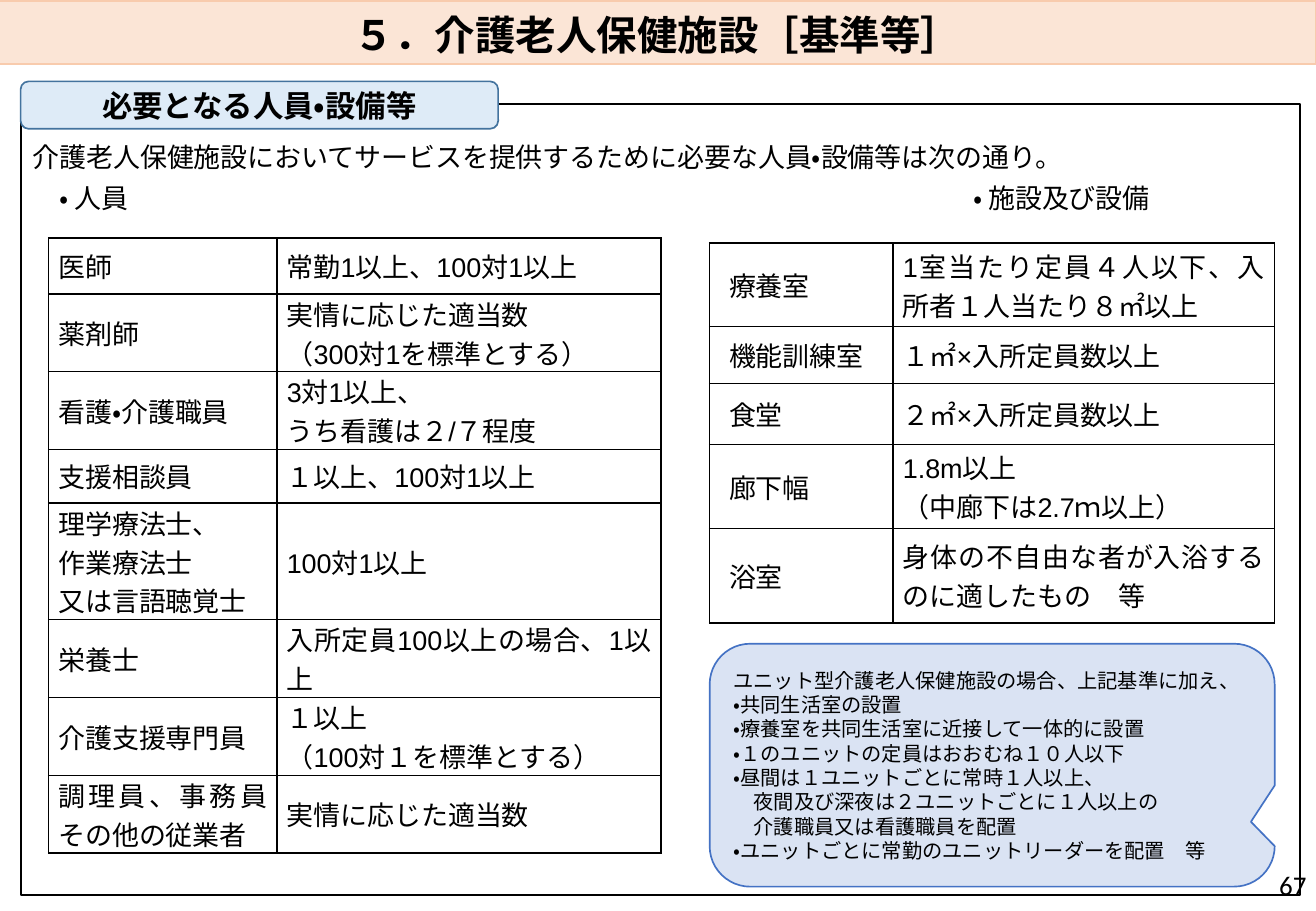
from dataclasses import dataclass

from lxml import etree
from pptx import Presentation
from pptx.dml.color import RGBColor
from pptx.enum.lang import MSO_LANGUAGE_ID
from pptx.enum.shapes import MSO_SHAPE
from pptx.enum.text import MSO_ANCHOR, PP_ALIGN
from pptx.oxml.ns import qn
from pptx.util import Inches, Pt

LEFT, CENTER, RIGHT, JUSTIFY = PP_ALIGN.LEFT, PP_ALIGN.CENTER, PP_ALIGN.RIGHT, PP_ALIGN.JUSTIFY
TOP, MIDDLE, BOTTOM = MSO_ANCHOR.TOP, MSO_ANCHOR.MIDDLE, MSO_ANCHOR.BOTTOM
RECTANGLE, ROUNDED = MSO_SHAPE.RECTANGLE, MSO_SHAPE.ROUNDED_RECTANGLE
CALLOUT = MSO_SHAPE.ROUNDED_RECTANGULAR_CALLOUT
JAPANESE = MSO_LANGUAGE_ID.JAPANESE

COLORS = {
    "ink": "000000",
    "label": "DEEBF7", "label_line": "43739E",
    "note": "DAE3F3", "note_line": "4472C4",
    "banner": "FBE5D6", "banner_line": "F8CBAD",
}
BODY, HEADING, NUMBER = "Arial", "Noto Sans CJK JP", "Calibri"


@dataclass(frozen=True)
class Style:
    size: float
    font: str = BODY
    bold: bool = False
    align: PP_ALIGN = LEFT


@dataclass(frozen=True)
class Panel:
    kind: MSO_SHAPE
    at: tuple[float, float, float, float]
    line: str
    text: str
    style: Style
    fill: str | None = None
    line_width: float = 1
    anchor: MSO_ANCHOR = MIDDLE
    adjustments: tuple[float, ...] = ()


@dataclass(frozen=True)
class Grid:
    left: float
    top: float
    columns: tuple[float, float]
    heights: tuple[float, ...]
    name_inset: float
    rows: tuple[tuple[str, str], ...]


FRAME = Panel(
    RECTANGLE, (0.17, 0.86, 10.53, 6.51), "ink",
    "介護老人保健施設においてサービスを提供するために必要な人員・設備等は次の通り。\n"
    "　・ 人員\t・ 施設及び設備",
    Style(16), line_width=1.25, anchor=TOP)
LABEL = Panel(ROUNDED, (0.17, 0.67, 3.93, 0.39), "label_line", "必要となる人員・設備等",
              Style(18, HEADING, True, CENTER), "label")
NOTE = Panel(
    CALLOUT, (5.84, 5.3, 4.65, 2), "note_line",
    "ユニット型介護老人保健施設の場合、上記基準に加え、\n"
    "・共同生活室の設置\n"
    "・療養室を共同生活室に近接して一体的に設置\n"
    "・１のユニットの定員はおおむね１０人以下\n"
    "・昼間は１ユニットごとに常時１人以上、\n"
    "　夜間及び深夜は２ユニットごとに１人以上の\n"
    "　介護職員又は看護職員を配置\n"
    "・ユニットごとに常勤のユニットリーダーを配置　等",
    Style(12), "note", adjustments=(0.458, 0.233, 0.167))
BANNER = Panel(RECTANGLE, (-0.01, 0.01, 10.84, 0.52), "banner_line",
               "５．介護老人保健施設［基準等］",
               Style(24, HEADING, True, CENTER), "banner", anchor=BOTTOM)

STAFF = Grid(
    0.4, 1.96, (1.88, 3.16), (0.46, 0.52, 0.56, 0.44, 0.86, 0.48, 0.6, 0.52), 0.08,
    (("医師", "常勤1以上、100対1以上"),
     ("薬剤師", "実情に応じた適当数\n（300対1を標準とする）"),
     ("看護・介護職員", "3対1以上、\nうち看護は２/７程度"),
     ("支援相談員", "１以上、100対1以上"),
     ("理学療法士、\n作業療法士\n又は言語聴覚士", "100対1以上"),
     ("栄養士", "入所定員100以上の場合、1以上"),
     ("介護支援専門員", "１以上\n（100対１を標準とする）"),
     ("調理員、事務員その他の従業者", "実情に応じた適当数")))
ROOMS = Grid(
    5.84, 2, (1.51, 3.14), (0.69, 0.47, 0.5, 0.69, 0.78), 0.16,
    (("療養室", "1室当たり定員４人以下、入所者１人当たり８㎡以上"),
     ("機能訓練室", "１㎡×入所定員数以上"),
     ("食堂", "２㎡×入所定員数以上"),
     ("廊下幅", "1.8m以上\n（中廊下は2.7ｍ以上）"),
     ("浴室", "身体の不自由な者が入浴するのに適したもの　等")))


def color(name: str) -> RGBColor:
    return RGBColor.from_string(COLORS[name])


def write(frame, text: str, style: Style) -> None:
    frame.text = text
    for para in frame.paragraphs:
        para.alignment = style.align
        font = para.font
        font.name, font.size, font.bold = style.font, Pt(style.size), style.bold
        font.color.rgb = color("ink")
        font.language_id = JAPANESE


def add_panel(page, panel: Panel):
    box = page.shapes.add_shape(panel.kind, *map(Inches, panel.at))
    box.shadow.inherit = False
    for index, value in enumerate(panel.adjustments):
        box.adjustments[index] = value
    if panel.fill:
        box.fill.solid()
        box.fill.fore_color.rgb = color(panel.fill)
    else:
        box.fill.background()
    box.line.color.rgb = color(panel.line)
    box.line.width = Pt(panel.line_width)
    box.text_frame.vertical_anchor = panel.anchor
    write(box.text_frame, panel.text, panel.style)
    return box.text_frame


def add_borders(cell) -> None:
    """Put a thin line on all four sides; must run before the cell's fill is set."""
    properties = cell._tc.get_or_add_tcPr()
    for side in ("a:lnL", "a:lnR", "a:lnT", "a:lnB"):
        line = etree.SubElement(properties, qn(side), w=str(Pt(1)))
        fill = etree.SubElement(line, qn("a:solidFill"))
        etree.SubElement(fill, qn("a:srgbClr"), val=COLORS["ink"])


def add_grid(page, grid: Grid) -> None:
    table = page.shapes.add_table(
        len(grid.rows), len(grid.columns), Inches(grid.left), Inches(grid.top),
        Inches(sum(grid.columns)), Inches(sum(grid.heights))).table
    table.first_row = table.horz_banding = False
    for column, width in zip(table.columns, grid.columns):
        column.width = Inches(width)
    for row, height, texts in zip(table.rows, grid.heights, grid.rows):
        row.height = Inches(height)
        for cell, text, inset in zip(row.cells, texts, (grid.name_inset, 0.08)):
            cell.margin_left, cell.margin_right = Inches(inset), Inches(0.08)
            cell.margin_top = cell.margin_bottom = 0
            cell.vertical_anchor = MIDDLE
            add_borders(cell)
            cell.fill.background()
            write(cell.text_frame, text, Style(16, align=JUSTIFY))


def add_frame(page) -> None:
    """Draw the outer frame, with a tab stop that places the second table's heading."""
    frame = add_panel(page, FRAME)
    frame.margin_top = Inches(0.3)
    headings = frame.paragraphs[1]
    headings.space_before = Pt(5)
    stops = etree.Element(qn("a:tabLst"))
    etree.SubElement(stops, qn("a:tab"), pos=str(Inches(7.74)), algn="l")
    headings._p.get_or_add_pPr().find(qn("a:defRPr")).addprevious(stops)


def add_page_number(page) -> None:
    box = page.shapes.add_textbox(*map(Inches, (10.1, 7.14, 0.75, 0.29)))
    box.text_frame.word_wrap = True
    box.text_frame.vertical_anchor = MIDDLE
    write(box.text_frame, "67", Style(16, NUMBER, align=RIGHT))


def main() -> None:
    deck = Presentation()
    deck.slide_width, deck.slide_height = Inches(10.83), Inches(7.5)
    page = deck.slides.add_slide(deck.slide_layouts[6])
    add_frame(page)
    add_panel(page, LABEL)
    add_grid(page, STAFF)
    add_grid(page, ROOMS)
    for para in add_panel(page, NOTE).paragraphs:
        para.line_spacing = Pt(14.4)
    add_panel(page, BANNER)
    add_page_number(page)
    deck.save("out.pptx")


if __name__ == "__main__":
    main()
